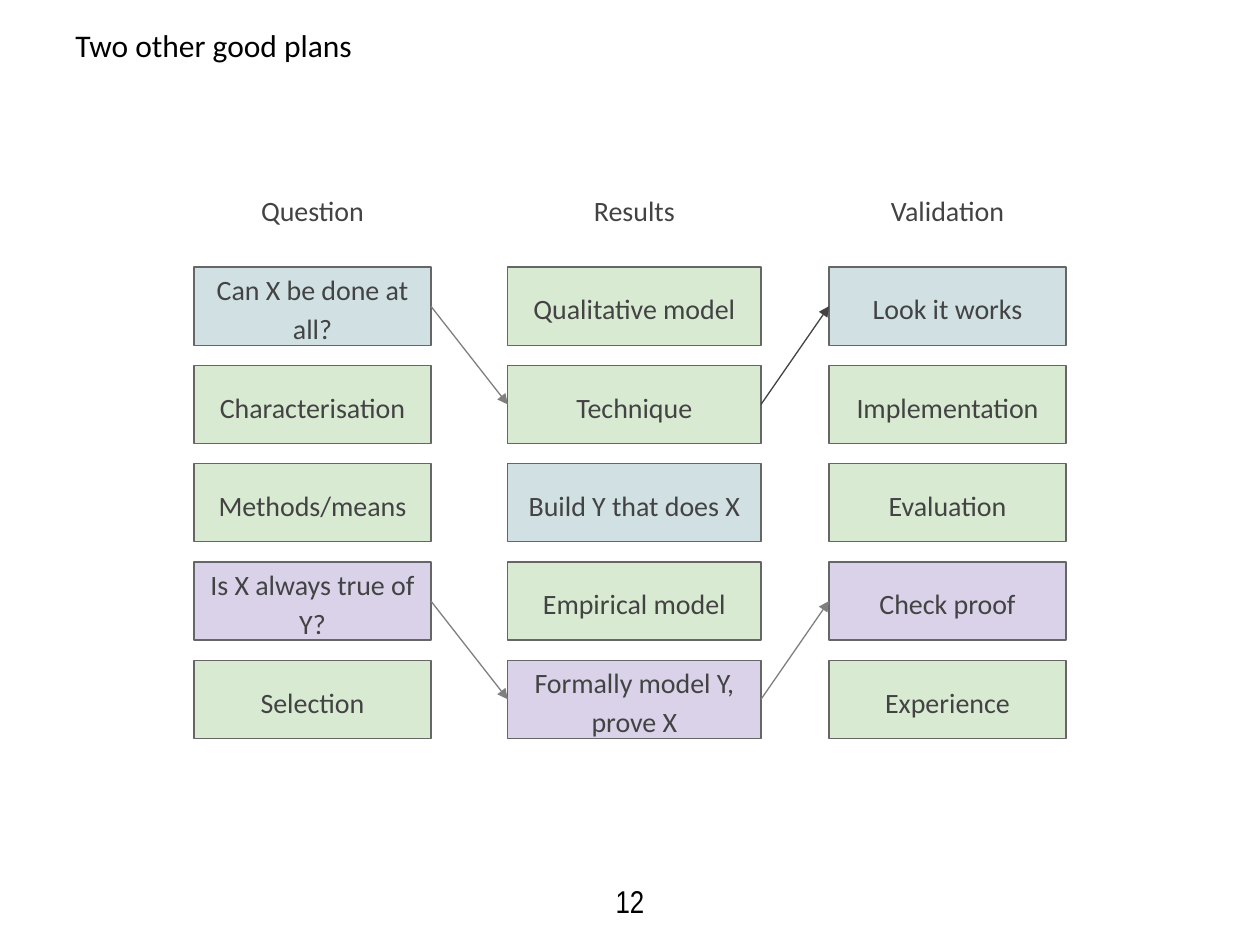
from dataclasses import dataclass
from typing import NamedTuple

from lxml.etree import SubElement
from pptx import Presentation
from pptx.dml.color import RGBColor
from pptx.enum.shapes import MSO_CONNECTOR, MSO_SHAPE
from pptx.enum.text import MSO_ANCHOR, PP_ALIGN
from pptx.oxml.ns import qn
from pptx.util import Inches, Pt


@dataclass(frozen=True)
class Theme:
    font: str = "Calibri"
    num_font: str = "Arial Narrow"
    big: int = 18
    body: int = 16
    rule: float = 0.75
    black: str = "000000"
    ink: str = "434343"
    edge: str = "666666"
    arrow: str = "7F7F7F"
    green: str = "D9EAD3"
    blue: str = "D0E0E3"
    mauve: str = "D9D2E9"


class Column(NamedTuple):
    head: str
    left: float
    width: float
    cells: tuple


class Link(NamedTuple):
    """An arrow between two cells, each given as (column, row)."""
    start: tuple
    end: tuple
    color: str


THEME = Theme()
TOP, PITCH, HEIGHT = 1.34, 0.78, 0.62
LEFT_SITE, RIGHT_SITE = 1, 3

COLUMNS = (
    Column("Question", 1.54, 1.88, (
        "Can X be done at all?", "Characterisation", "Methods/means",
        "Is X always true of Y?", "Selection")),
    Column("Results", 4.03, 2.01, (
        "Qualitative model", "Technique", "Build Y that does X",
        "Empirical model", "Formally model Y, prove X")),
    Column("Validation", 6.58, 1.88, (
        "Look it works", "Implementation", "Evaluation",
        "Check proof", "Experience")),
)
FILLS = {
    (0, 0): THEME.blue, (1, 2): THEME.blue, (2, 0): THEME.blue,
    (0, 3): THEME.mauve, (1, 4): THEME.mauve, (2, 3): THEME.mauve,
}
LINKS = (
    Link((0, 0), (1, 1), THEME.arrow),
    Link((1, 1), (2, 0), THEME.ink),
    Link((0, 3), (1, 4), THEME.arrow),
    Link((1, 4), (2, 3), THEME.arrow),
)


def rgb(code: str) -> RGBColor:
    return RGBColor.from_string(code)


def write(shape, text: str, size: int, color: str, font: str = THEME.font,
          align=PP_ALIGN.CENTER, anchor=MSO_ANCHOR.MIDDLE,
          pad: tuple = (0.1, 0.1), spacing: float = 1.0) -> None:
    """Set a shape's text; pad is the side and the top/bottom inset."""
    frame = shape.text_frame
    frame.text = text
    frame.word_wrap = True
    frame.vertical_anchor = anchor
    frame.margin_left = frame.margin_right = Inches(pad[0])
    frame.margin_top = frame.margin_bottom = Inches(pad[1])
    line = frame.paragraphs[0]
    line.alignment = align
    line.line_spacing = spacing
    style = line.runs[0].font
    style.name, style.size = font, Pt(size)
    style.color.rgb = rgb(color)


def place(col: Column, row: int) -> tuple:
    """Box of a grid cell; row 0 holds the heading."""
    return tuple(map(Inches, (col.left, TOP + row * PITCH, col.width, HEIGHT)))


def draw_cell(slide, col: Column, row: int, text: str, fill: str):
    box = slide.shapes.add_shape(MSO_SHAPE.RECTANGLE, *place(col, row))
    box.shadow.inherit = False
    box.fill.solid()
    box.fill.fore_color.rgb = rgb(fill)
    box.line.color.rgb = rgb(THEME.edge)
    box.line.width = Pt(THEME.rule)
    write(box, text, THEME.body, THEME.ink, spacing=1.15)
    return box


def draw_link(slide, link: Link, cells: dict) -> None:
    line = slide.shapes.add_connector(MSO_CONNECTOR.STRAIGHT, 0, 0, 0, 0)
    line.begin_connect(cells[link.start], RIGHT_SITE)
    line.end_connect(cells[link.end], LEFT_SITE)
    line.line.color.rgb = rgb(link.color)
    line.line.width = Pt(THEME.rule)
    SubElement(line.line._get_or_add_ln(), qn("a:tailEnd"), type="triangle")
    SubElement(line._element.spPr, qn("a:effectLst"))


def main() -> None:
    deck = Presentation()
    deck.slide_width, deck.slide_height = Inches(10), Inches(7.5)
    slide = deck.slides.add_slide(deck.slide_layouts[6])
    add_text = slide.shapes.add_textbox

    number = add_text(*map(Inches, (4.46, 6.95, 1.08, 0.4)))
    write(number, "12", THEME.big, THEME.black, THEME.num_font,
          pad=(0.07, 0.04))
    title = add_text(*map(Inches, (0.5, 0.16, 9, 0.56)))
    write(title, "Two other good plans", THEME.big, THEME.black,
          align=PP_ALIGN.LEFT, anchor=MSO_ANCHOR.TOP, pad=(0.1, 0.05))

    cells = {}
    for c, col in enumerate(COLUMNS):
        write(add_text(*place(col, 0)), col.head, THEME.body, THEME.ink,
              spacing=1.15)
        for r, text in enumerate(col.cells):
            fill = FILLS.get((c, r), THEME.green)
            cells[c, r] = draw_cell(slide, col, r + 1, text, fill)
    for link in LINKS:
        draw_link(slide, link, cells)
    deck.save("out.pptx")


if __name__ == "__main__":
    main()
